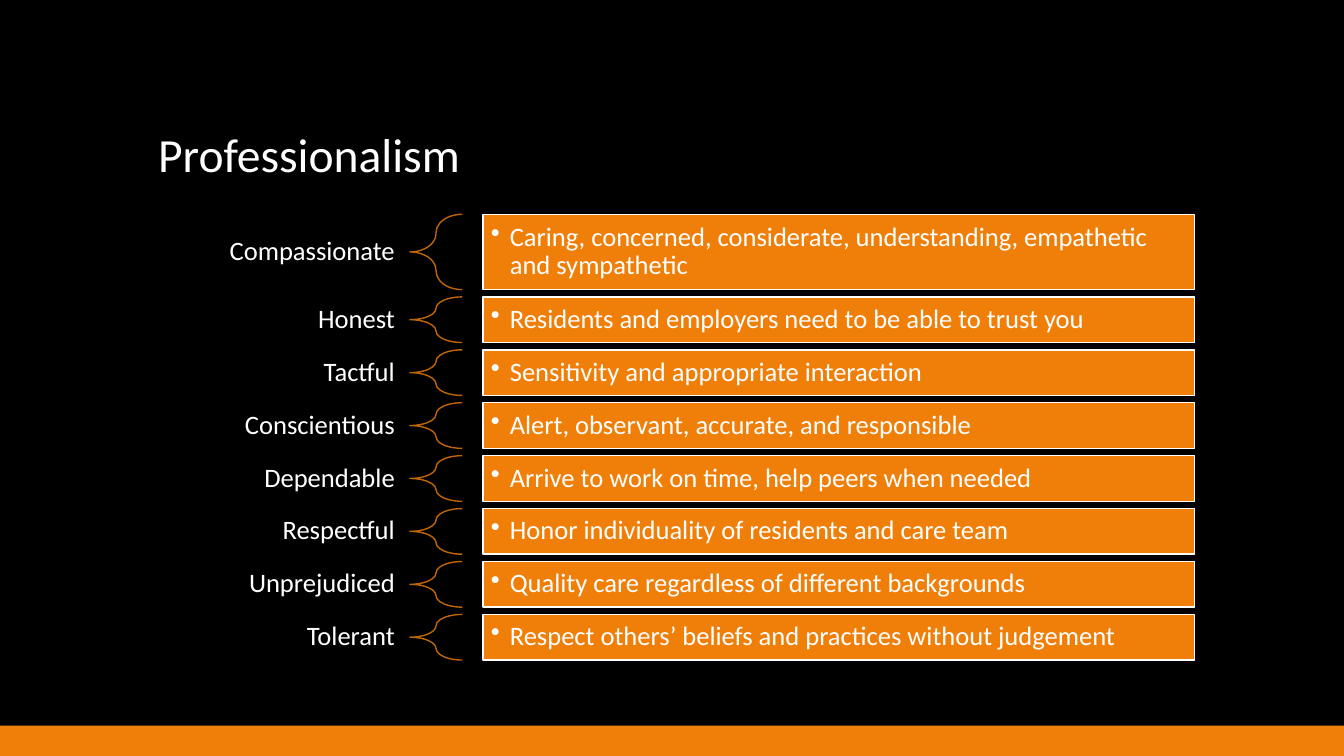
from dataclasses import dataclass

from lxml import etree
from pptx import Presentation
from pptx.dml.color import RGBColor
from pptx.enum import shapes, text
from pptx.oxml import ns
from pptx.util import Pt


@dataclass(frozen=True)
class Theme:
    back: RGBColor = RGBColor.from_string("000000")
    ink: RGBColor = RGBColor.from_string("FFFFFF")
    accent: RGBColor = RGBColor.from_string("F07F09")
    brace: RGBColor = RGBColor.from_string("C06607")
    font: str = "Calibri"
    title_size: float = 34
    body_size: float = 19
    line: float = 1


THEME = Theme()
WIDTH, HEIGHT = 960, 540
TRAITS = [
    ("Compassionate", "Caring, concerned, considerate, understanding, empathetic and sympathetic"),
    ("Honest", "Residents and employers need to be able to trust you"),
    ("Tactful", "Sensitivity and appropriate interaction"),
    ("Conscientious", "Alert, observant, accurate, and responsible"),
    ("Dependable", "Arrive to work on time, help peers when needed"),
    ("Respectful", "Honor individuality of residents and care team"),
    ("Unprejudiced", "Quality care regardless of different backgrounds"),
    ("Tolerant", "Respect others’ beliefs and practices without judgement"),
]
TALL_ROW, ROW, ROW_GAP = 53.8, 32.6, 5.2
LABEL_WIDTH, BRACE_WIDTH, BOX_OFFSET = 187, 37.4, 239.2


def set_all(obj, **values):
    for name, value in values.items():
        setattr(obj, name, value)


def write(sp, words, size, align, anchor, inset):
    """Fill a shape with one paragraph; inset is (horizontal, vertical)."""
    tf = sp.text_frame
    x, y = map(Pt, inset)
    set_all(tf, word_wrap=True, auto_size=text.MSO_AUTO_SIZE.NONE, vertical_anchor=anchor,
            margin_left=x, margin_right=x, margin_top=y, margin_bottom=y)
    p = tf.paragraphs[0]
    set_all(p, alignment=align, line_spacing=0.9)
    r = p.add_run()
    r.text = words
    set_all(r.font, name=THEME.font, size=Pt(size))
    r.font.color.rgb = THEME.ink
    return p


def add_bullet(p, indent):
    pPr = p._p.get_or_add_pPr()
    pPr.set("marL", str(Pt(indent)))
    pPr.set("indent", str(-Pt(indent)))
    etree.SubElement(pPr, ns.qn("a:buChar")).set("char", "•")


def add_plain(s, kind, box, fill=None, line=None):
    """Add a shadowless preset shape; a missing fill or line is left off."""
    sp = s.shapes.add_shape(kind, *map(Pt, box))
    sp.shadow.inherit = False
    for part, color in ((sp.fill, fill), (sp.line.fill, line)):
        if color is None:
            part.background()
        else:
            part.solid()
            part.fore_color.rgb = color
    if line is not None:
        sp.line.width = Pt(THEME.line)
    return sp


def add_title(s, box, words):
    sp = s.shapes.title
    set_all(sp, **dict(zip(("left", "top", "width", "height"), map(Pt, box))))
    write(sp, words, THEME.title_size, text.PP_ALIGN.LEFT, text.MSO_ANCHOR.BOTTOM, (7.2, 3.6))


def add_trait(s, box, label, detail):
    """Place a label, a brace and a bulleted box side by side."""
    x, y, w, h = box
    middle = text.MSO_ANCHOR.MIDDLE
    sp = s.shapes.add_textbox(Pt(x), Pt(y + (h - 29.6) / 2), Pt(LABEL_WIDTH), Pt(29.6))
    write(sp, label, THEME.body_size, text.PP_ALIGN.RIGHT, middle, (10.8, 3.6))

    brace = add_plain(s, shapes.MSO_SHAPE.LEFT_BRACE,
                      (x + LABEL_WIDTH, y, BRACE_WIDTH, h), line=THEME.brace)
    brace.adjustments[0] = 0.35

    sp = add_plain(s, shapes.MSO_SHAPE.RECTANGLE,
                   (x + BOX_OFFSET, y, w - BOX_OFFSET, h), THEME.accent, THEME.ink)
    p = write(sp, detail, THEME.body_size, text.PP_ALIGN.LEFT, middle, (5.7, 5.7))
    add_bullet(p, 13.5)


def add_traits(s, box, traits):
    """Stack the traits from the top of the box; the first row is two lines tall."""
    x, y, w = box
    for i, (label, detail) in enumerate(traits):
        h = ROW if i else TALL_ROW
        add_trait(s, (x, y, w, h), label, detail)
        y += h + ROW_GAP


def build_slide(prs):
    s = prs.slides.add_slide(prs.slide_layouts[5])
    s.background.fill.solid()
    s.background.fill.fore_color.rgb = THEME.back
    add_plain(s, shapes.MSO_SHAPE.RECTANGLE, (0, HEIGHT - 21.6, WIDTH, 21.6), THEME.accent)
    add_title(s, (105.8, 36.7, 748.8, 97.2), "Professionalism")
    add_traits(s, (105.8, 153.1, 747.5), TRAITS)


def main():
    prs = Presentation()
    set_all(prs, slide_width=Pt(WIDTH), slide_height=Pt(HEIGHT))
    build_slide(prs)
    prs.save("out.pptx")


if __name__ == "__main__":
    main()
